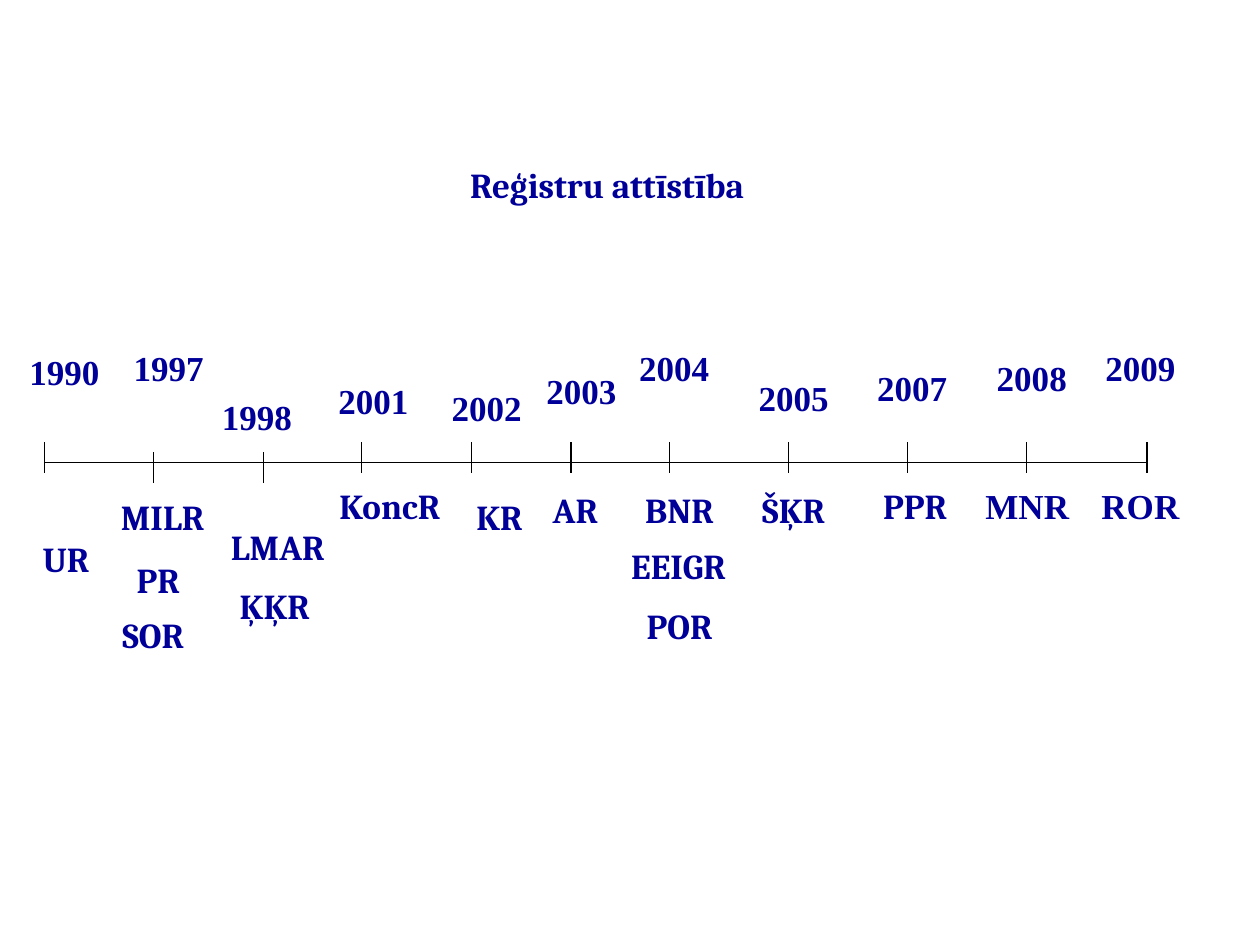
from dataclasses import dataclass

from lxml.etree import SubElement
from pptx import Presentation
from pptx.dml.color import RGBColor
from pptx.enum.shapes import MSO_CONNECTOR
from pptx.enum.text import MSO_ANCHOR, MSO_AUTO_SIZE, PP_ALIGN
from pptx.oxml.ns import qn
from pptx.util import Cm, Pt


@dataclass(frozen=True)
class Theme:
    text_color: RGBColor = RGBColor(0x00, 0x00, 0x99)
    line_color: RGBColor = RGBColor(0x00, 0x00, 0x00)
    text_size: Pt = Pt(20)
    line_width: Pt = Pt(0.75)
    name_font: str = "Cambria"
    year_font: str = "Times New Roman"


@dataclass(frozen=True)
class Box:
    left: float
    top: float
    width: float
    height: float


@dataclass(frozen=True)
class Label:
    text: str
    center: float
    top: float
    width: float = 1.93
    font: str = "Cambria"


THEME = Theme()
LABEL_HEIGHT = 1.09
AXIS_TOP = 2.46
TICK_TOP = 2.06
TICK_HEIGHT = 0.61
LOWERED_TICK_DROP = 0.2
TICKS = [0, 2.21, 4.42, 6.4, 8.61, 10.62, 12.6, 15.01, 17.4, 19.81, 22.23]
LOWERED_TICKS = {2.21, 4.42}

YEARS = [
    Label(text, center, top, font=THEME.year_font)
    for text, center, top in [
        ("1990", 0.41, 0.08),
        ("1997", 2.51, 0),
        ("1998", 4.29, 0.99),
        ("2001", 6.64, 0.66),
        ("2002", 8.92, 0.81),
        ("2003", 10.83, 0.46),
        ("2004", 12.7, 0),
        ("2005", 15.11, 0.61),
        ("2007", 17.5, 0.41),
        ("2008", 19.91, 0.2),
        ("2009", 22.1, 0),
    ]
]

REGISTERS = [
    Label("UR", 0.44, 3.86, 1.65),
    Label("MILR", 2.39, 3, 2.59),
    Label("PR", 2.3, 4.27, 1.8),
    Label("SOR", 2.2, 5.38, 2.11),
    Label("LMAR", 4.71, 3.61, 2.82),
    Label("ĶĶR", 4.65, 4.8, 2.24),
    Label("KoncR", 6.97, 2.79, 2.97),
    Label("KR", 9.18, 3, 1.65),
    Label("AR", 10.71, 2.87, 2.21),
    Label("BNR", 12.81, 2.87, 2.41),
    Label("EEIGR", 12.79, 3.99, 2.97),
    Label("POR", 12.81, 5.21, 2.16),
    Label("ŠĶR", 15.11, 2.87, 2.59),
    Label("PPR", 17.56, 2.79, 2.06),
    Label("MNR", 19.82, 2.79, 2.21, THEME.year_font),
    Label("ROR", 22.1, 2.79, 2.08, THEME.year_font),
]


def write_text(text_frame, text, *, font, anchor=MSO_ANCHOR.TOP, wrap=False,
               auto_size=MSO_AUTO_SIZE.SHAPE_TO_FIT_TEXT):
    text_frame.word_wrap = wrap
    text_frame.auto_size = auto_size
    text_frame.vertical_anchor = anchor
    paragraph = text_frame.paragraphs[0]
    paragraph.alignment = PP_ALIGN.CENTER
    run = paragraph.add_run()
    run.text = text
    run.font.name = font
    run.font.size = THEME.text_size
    run.font.bold = True
    run.font.color.rgb = THEME.text_color


def add_line(slide, left, top, right, bottom):
    line = slide.shapes.add_connector(
        MSO_CONNECTOR.STRAIGHT, Cm(left), Cm(top), Cm(right), Cm(bottom))
    line.line.color.rgb = THEME.line_color
    line.line.width = THEME.line_width
    SubElement(line._element.spPr, qn("a:effectLst"))


def add_label(slide, box, label):
    shape = slide.shapes.add_textbox(
        Cm(box.left + label.center - label.width / 2), Cm(box.top + label.top),
        Cm(label.width), Cm(LABEL_HEIGHT))
    write_text(shape.text_frame, label.text, font=label.font)


def place_title(slide, box, text):
    title = slide.shapes.title
    title.left, title.top = Cm(box.left), Cm(box.top)
    title.width, title.height = Cm(box.width), Cm(box.height)
    write_text(title.text_frame, text, font=THEME.name_font, wrap=True,
               anchor=MSO_ANCHOR.MIDDLE, auto_size=MSO_AUTO_SIZE.NONE)


def place_timeline(slide, box):
    axis_top = box.top + AXIS_TOP
    add_line(slide, box.left, axis_top, box.left + box.width, axis_top)
    for tick in TICKS:
        left = box.left + tick
        drop = LOWERED_TICK_DROP if tick in LOWERED_TICKS else 0
        top = box.top + TICK_TOP + drop
        add_line(slide, left, top, left, top + TICK_HEIGHT)
    for label in YEARS + REGISTERS:
        add_label(slide, box, label)


def main():
    presentation = Presentation()
    presentation.slide_width = Cm(25.4)
    presentation.slide_height = Cm(19.05)
    slide = presentation.slides.add_slide(presentation.slide_layouts[5])
    place_title(slide, Box(0.89, 2.13, 22.86, 3.18), "Reģistru attīstība ")
    place_timeline(slide, Box(0.89, 6.86, 22.23, 6.47))
    presentation.save("out.pptx")


if __name__ == "__main__":
    main()
